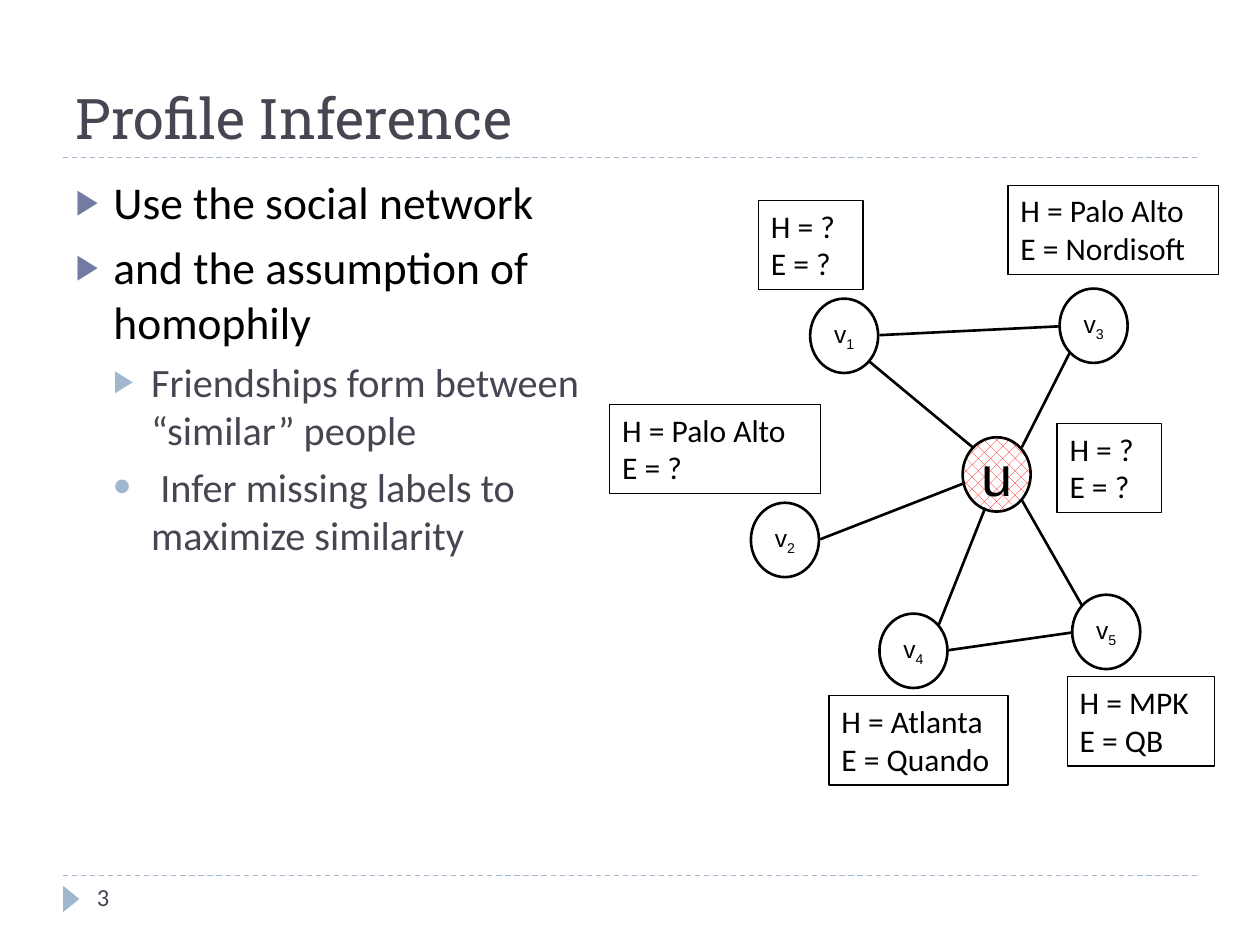
"""Build the Profile Inference slide with its labelled friendship graph."""
from dataclasses import dataclass

from lxml.etree import SubElement
from pptx import Presentation
from pptx.dml.color import RGBColor
from pptx.enum.dml import MSO_LINE, MSO_PATTERN
from pptx.enum.shapes import MSO_CONNECTOR, MSO_SHAPE
from pptx.enum.text import MSO_ANCHOR, MSO_AUTO_SIZE, PP_ALIGN
from pptx.oxml.ns import qn
from pptx.util import Emu, Pt

PX = 9144
COLORS = {"ink": "000000", "paper": "FFFFFF", "slate": "464653",
          "indigo": "727CA3", "sky": "9FB8CD", "red": "FF0000"}
SANS, NODE_FONT, HEAD = "Calibri", "Arial", "Roboto Slab"


@dataclass
class Item:
    text: str
    level: int = 0
    mark: str = "▶"
    scale: int = 76


@dataclass
class Node:
    x: int
    y: int
    name: str
    sub: str = ""


@dataclass
class Edge:
    x1: int
    y1: int
    x2: int
    y2: int


@dataclass
class Card:
    x: int
    y: int
    wide: int
    home: str
    work: str


ITEMS = [
    Item("Use the social network"),
    Item("and the assumption of homophily"),
    Item("Friendships form between “similar” people", 1),
    Item(" Infer missing labels to maximize similarity", 1, "•", 125),
]
NODES = [
    Node(764, 347, "u"),
    Node(643, 237, "v", "1"),
    Node(596, 399, "v", "2"),
    Node(841, 229, "v", "3"),
    Node(698, 487, "v", "4"),
    Node(851, 472, "v", "5"),
]
EDGES = [
    Edge(690, 287, 772, 355),
    Edge(849, 280, 811, 355),
    Edge(651, 428, 764, 384),
    Edge(745, 496, 782, 403),
    Edge(859, 481, 811, 397),
    Edge(851, 502, 753, 516),
    Edge(841, 259, 698, 266),
]
CARDS = [
    Card(800, 147, 167, "Palo Alto", "Nordisoft"),
    Card(847, 537, 117, "MPK", "QB"),
    Card(658, 552, 142, "Atlanta", "Quando"),
    Card(484, 321, 167, "Palo Alto", "?"),
    Card(839, 336, 83, "?", "?"),
    Card(602, 159, 83, "?", "?"),
]


def px(*sizes: int) -> list[Emu]:
    return [Emu(size * PX) for size in sizes]


def tint(key: str) -> RGBColor:
    return RGBColor.from_string(COLORS[key])


def add_run(para, text: str, size: int, key: str = "ink", face: str = SANS):
    run = para.add_run()
    run.text = text
    run.font.size, run.font.name = Pt(size), face
    run.font.color.rgb = tint(key)
    return run


def place(shape, *box: int) -> None:
    shape.left, shape.top, shape.width, shape.height = px(*box)


def add_line(slide, edge: Edge, key: str = "ink", weight: float = 1.5,
             dashed: bool = False) -> None:
    line = slide.shapes.add_connector(
        MSO_CONNECTOR.STRAIGHT, *px(edge.x1, edge.y1, edge.x2, edge.y2))
    line.line.color.rgb = tint(key)
    line.line.width = Pt(weight)
    if dashed:
        line.line.dash_style = MSO_LINE.DASH
    SubElement(line._element.spPr, qn("a:effectLst"))


def add_form(slide, kind, box: tuple, weight: float):
    form = slide.shapes.add_shape(kind, *px(*box))
    form.shadow.inherit = False
    form.fill.background()
    form.line.color.rgb = tint("ink")
    form.line.width = Pt(weight)
    return form


def add_title(slide, text: str) -> None:
    title = slide.shapes.title
    place(title, 50, 25, 900, 100)
    frame = title.text_frame
    frame.vertical_anchor = MSO_ANCHOR.BOTTOM
    frame.auto_size = MSO_AUTO_SIZE.NONE
    para = frame.paragraphs[0]
    para.alignment = PP_ALIGN.LEFT
    add_run(para, text, 32, "slate", HEAD)


def add_item(para, item: Item) -> None:
    size, key, mark, gap = [(26, "ink", "indigo", 6),
                            (23, "slate", "sky", 5)][item.level]
    para.level = item.level
    para.space_before = Pt(gap)
    props = para._p.get_or_add_pPr()
    props.set("marL", str(30 * PX * (item.level + 1)))
    props.set("indent", str(-30 * PX))
    color = SubElement(props, qn("a:buClr"))
    SubElement(color, qn("a:srgbClr"), val=COLORS[mark])
    SubElement(props, qn("a:buSzPct"), val=str(item.scale * 1000))
    SubElement(props, qn("a:buFont"), typeface=NODE_FONT)
    SubElement(props, qn("a:buChar"), char=item.mark)
    add_run(para, item.text, size, key)


def add_list(slide, items: list[Item]) -> None:
    body = slide.placeholders[1]
    place(body, 50, 133, 442, 540)
    frame = body.text_frame
    frame.auto_size = MSO_AUTO_SIZE.NONE
    for i, item in enumerate(items):
        add_item(frame.add_paragraph() if i else frame.paragraphs[0], item)


def add_node(slide, node: Node) -> None:
    form = add_form(slide, MSO_SHAPE.OVAL, (node.x, node.y, 54, 59), 1.5)
    frame = form.text_frame
    frame.word_wrap = False
    frame.vertical_anchor = MSO_ANCHOR.MIDDLE
    para = frame.paragraphs[0]
    para.alignment = PP_ALIGN.CENTER
    add_run(para, node.name, 14 if node.sub else 32, face=NODE_FONT)
    if node.sub:
        sub = add_run(para, node.sub, 14, face=NODE_FONT)
        sub.font._element.set("baseline", "-25000")
    else:
        form.fill.patterned()
        form.fill.pattern = MSO_PATTERN.PERCENT_30
        form.fill.fore_color.rgb = tint("red")
        form.fill.back_color.rgb = tint("paper")


def add_card(slide, card: Card) -> None:
    form = add_form(slide, MSO_SHAPE.RECTANGLE,
                    (card.x, card.y, card.wide, 71), 0.75)
    frame = form.text_frame
    frame.vertical_anchor = MSO_ANCHOR.TOP
    para = frame.paragraphs[0]
    para.alignment = PP_ALIGN.LEFT
    add_run(para, f"H = {card.home}", 18)
    para.add_line_break()
    add_run(para, f"E = {card.work}", 18)


def add_foot(slide, number: str) -> None:
    mark = add_form(slide, MSO_SHAPE.ISOSCELES_TRIANGLE, (46, 707, 21, 13), 0.75)
    mark.rotation = 90
    mark.fill.solid()
    mark.fill.fore_color.rgb = tint("sky")
    mark.line.fill.background()
    box = slide.shapes.add_textbox(*px(67, 695, 217, 40))
    box.text_frame.word_wrap = True
    add_run(box.text_frame.paragraphs[0], number, 14, "slate")


def main() -> None:
    deck = Presentation()
    deck.slide_width, deck.slide_height = px(1000, 750)
    slide = deck.slides.add_slide(deck.slide_layouts[1])
    for y in (695, 125):
        add_line(slide, Edge(50, y, 950, y), "sky", 0.75, True)
    add_title(slide, "Profile Inference")
    add_list(slide, ITEMS)
    for draw, parts in ((add_node, NODES), (add_line, EDGES), (add_card, CARDS)):
        for part in parts:
            draw(slide, part)
    add_foot(slide, "3")
    deck.save("out.pptx")


if __name__ == "__main__":
    main()
